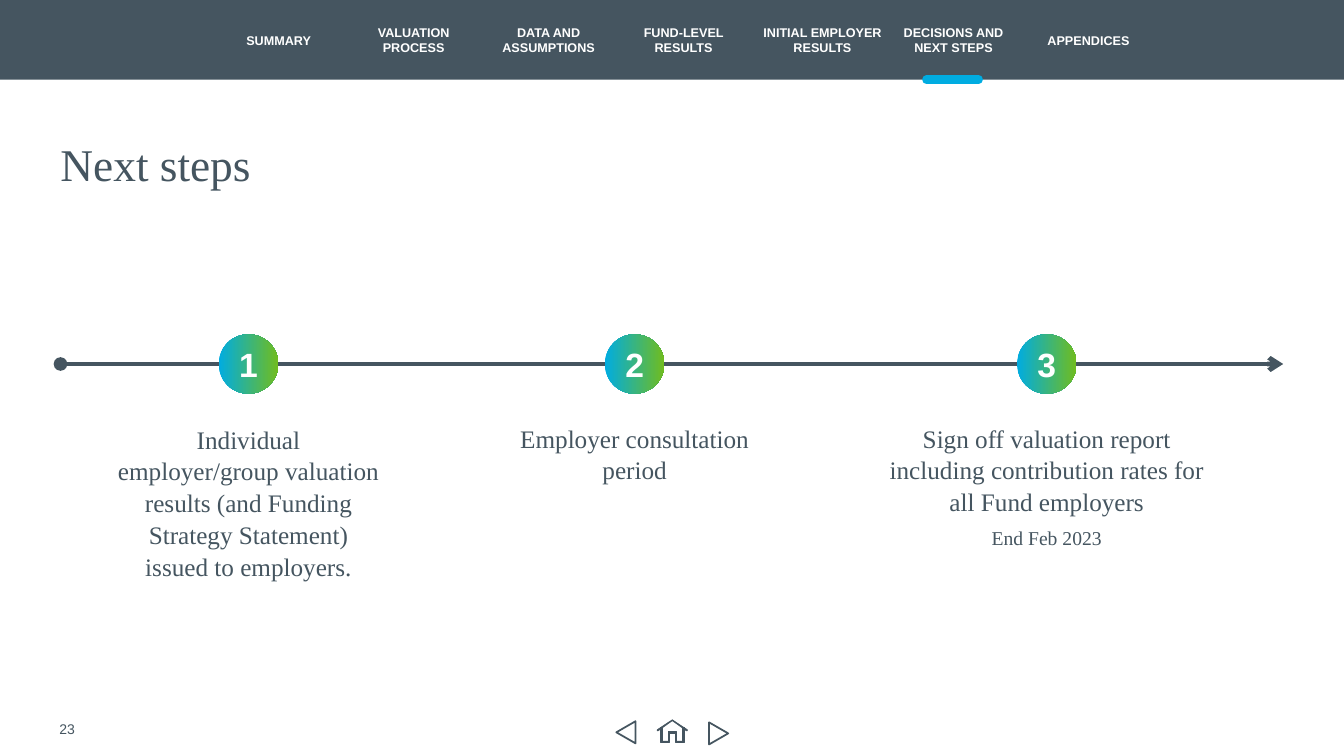
"""Build the "Next steps" timeline slide."""
from lxml.etree import SubElement
from pptx import Presentation
from pptx.dml.color import RGBColor
from pptx.enum.shapes import MSO_CONNECTOR, MSO_SHAPE
from pptx.enum.text import MSO_ANCHOR, PP_ALIGN
from pptx.oxml.ns import qn
from pptx.util import Pt

COLORS = {"slate": "455560", "white": "FFFFFF", "blue": "00ACE1", "green": "70BC1F"}
SERIF, SANS = "Times New Roman", "Arial"

SECTIONS = ["SUMMARY", "VALUATION PROCESS", "DATA AND ASSUMPTIONS",
            "FUND-LEVEL RESULTS", "INITIAL EMPLOYER RESULTS",
            "DECISIONS AND NEXT STEPS", "APPENDICES"]
WIDE_SECTION = "INITIAL EMPLOYER RESULTS"

STEPS = [
    (177.5, 301.7, 188.6, 71.3,
     [("Individual employer/group valuation results (and Funding Strategy Statement) "
       "issued to employers.", 18)]),
    (453.3, 301, 188.6, 108.7, [("Employer consultation period", 18)]),
    (747.7, 301, 225.4, 103,
     [("Sign off valuation report including contribution rates for all Fund employers", 18),
      ("End Feb 2023", 14)]),
]
TIMELINE_Y, MARKER_SIZE = 260, 42.5

HOME_WALLS = [(655, 722), (657, 722), (657, 735), (663, 735), (663, 726), (671, 726),
              (671, 735), (677, 735), (677, 722), (679, 722), (679, 736), (670, 736),
              (670, 727), (664, 727), (664, 736), (655, 736)]
HOME_ROOF = [(652, 724), (667, 714), (682, 724), (682, 725), (681, 725), (667, 715),
             (653, 725), (652, 725)]


def color(name):
    return RGBColor.from_string(COLORS[name])


def write(shape, lines, font=SANS, ink="slate", bold=False, align=PP_ALIGN.LEFT,
          anchor=MSO_ANCHOR.MIDDLE, insets=(7.2, 3.6), spacing=None, after=0):
    """Fill a shape with (text, size) paragraphs."""
    frame = shape.text_frame
    frame.word_wrap = True
    frame.vertical_anchor = anchor
    frame.margin_left = frame.margin_right = Pt(insets[0])
    frame.margin_top = frame.margin_bottom = Pt(insets[1])
    for index, (text, size) in enumerate(lines):
        paragraph = frame.add_paragraph() if index else frame.paragraphs[0]
        paragraph.text = text
        paragraph.alignment = align
        paragraph.space_before, paragraph.space_after = Pt(0), Pt(after)
        paragraph.line_spacing = spacing
        paragraph.font.name = font
        paragraph.font.size = Pt(size)
        paragraph.font.bold = bold
        paragraph.font.color.rgb = color(ink)


def add_label(slide, left, top, width, height, lines, **style):
    label = slide.shapes.add_textbox(Pt(left), Pt(top), Pt(width), Pt(height))
    write(label, lines, **style)


def paint(shape, fill, line=None, weight=0):
    shape.shadow.inherit = False
    shape.fill.solid()
    shape.fill.fore_color.rgb = color(fill)
    if line:
        shape.line.color.rgb = color(line)
        shape.line.width = Pt(weight)
    else:
        shape.line.fill.background()


def add_preset(slide, kind, left, top, width, height):
    return slide.shapes.add_shape(kind, Pt(left), Pt(top), Pt(width), Pt(height))


def add_rule(slide, start, end, y, ink, weight, cap="flat", head=None, tail=None):
    rule = slide.shapes.add_connector(MSO_CONNECTOR.STRAIGHT, Pt(start), Pt(y), Pt(end), Pt(y))
    rule.line.color.rgb = color(ink)
    rule.line.width = Pt(weight)
    stroke = rule.line._get_or_add_ln()
    stroke.set("cap", cap)
    for tag, ending in (("a:headEnd", head), ("a:tailEnd", tail)):
        if ending:
            SubElement(stroke, qn(tag), type=ending)
    SubElement(rule._element.spPr, qn("a:effectLst"))


def add_navigation(slide):
    paint(add_preset(slide, MSO_SHAPE.RECTANGLE, 0, 0, 960, 56.9), "slate")
    for index, section in enumerate(SECTIONS):
        width = 91.4 if section == WIDE_SECTION else 85.7
        add_label(slide, 156.2 + 96.4 * index, 13, width, 31.7, [(section, 9)], ink="white",
                  bold=True, align=PP_ALIGN.CENTER, insets=(2.88, 0))
    add_rule(slide, 661.7, 699.1, 56.9, "blue", 6, cap="rnd")


def add_outline(slide, points):
    builder = slide.shapes.build_freeform(*points[0], scale=Pt(0.72))
    builder.add_line_segments(points[1:], close=True)
    paint(builder.convert_to_shape(), "slate", "slate", 0.41)


def add_footer(slide):
    add_label(slide, 35.3, 506.2, 162, 28.8, [("23", 10)])
    for outline in (HOME_WALLS, HOME_ROOF):
        add_outline(slide, outline)
    for left, top, rotation in ((439.2, 516.2, 270), (505.4, 517, 90)):
        arrow = add_preset(slide, MSO_SHAPE.ISOSCELES_TRIANGLE, left, top, 15.8, 13.7)
        arrow.rotation = rotation
        paint(arrow, "white", "slate", 1.25)


def add_marker(slide, center, number):
    marker = add_preset(slide, MSO_SHAPE.OVAL, center - MARKER_SIZE / 2,
                        TIMELINE_Y - MARKER_SIZE / 2, MARKER_SIZE, MARKER_SIZE)
    marker.shadow.inherit = False
    marker.line.fill.background()
    marker.fill.gradient()
    marker.fill.gradient_angle = 0
    for stop, name in zip(marker.fill.gradient_stops, ("blue", "green")):
        stop.color.rgb = color(name)
    write(marker, [(str(number), 24)], ink="white", bold=True, align=PP_ALIGN.CENTER)


def add_timeline(slide):
    add_rule(slide, 43.2, 916.6, TIMELINE_Y, "slate", 3.25, head="oval", tail="arrow")
    for number, (center, top, width, height, lines) in enumerate(STEPS, 1):
        add_marker(slide, center, number)
        add_label(slide, center - width / 2, top, width, height, lines, font=SERIF,
                  align=PP_ALIGN.CENTER, anchor=MSO_ANCHOR.TOP, insets=(0, 0),
                  spacing=1.05, after=6)


def main():
    deck = Presentation()
    deck.slide_width, deck.slide_height = Pt(960), Pt(540)
    slide = deck.slides.add_slide(deck.slide_layouts[5])
    title = slide.shapes.title
    title.left, title.top, title.width, title.height = Pt(43.2), Pt(100.8), Pt(873.4), Pt(36)
    write(title, [("Next steps", 32.4)], font=SERIF, insets=(0, 0), spacing=0.9)
    add_navigation(slide)
    add_footer(slide)
    add_timeline(slide)
    deck.save("out.pptx")


if __name__ == "__main__":
    main()
